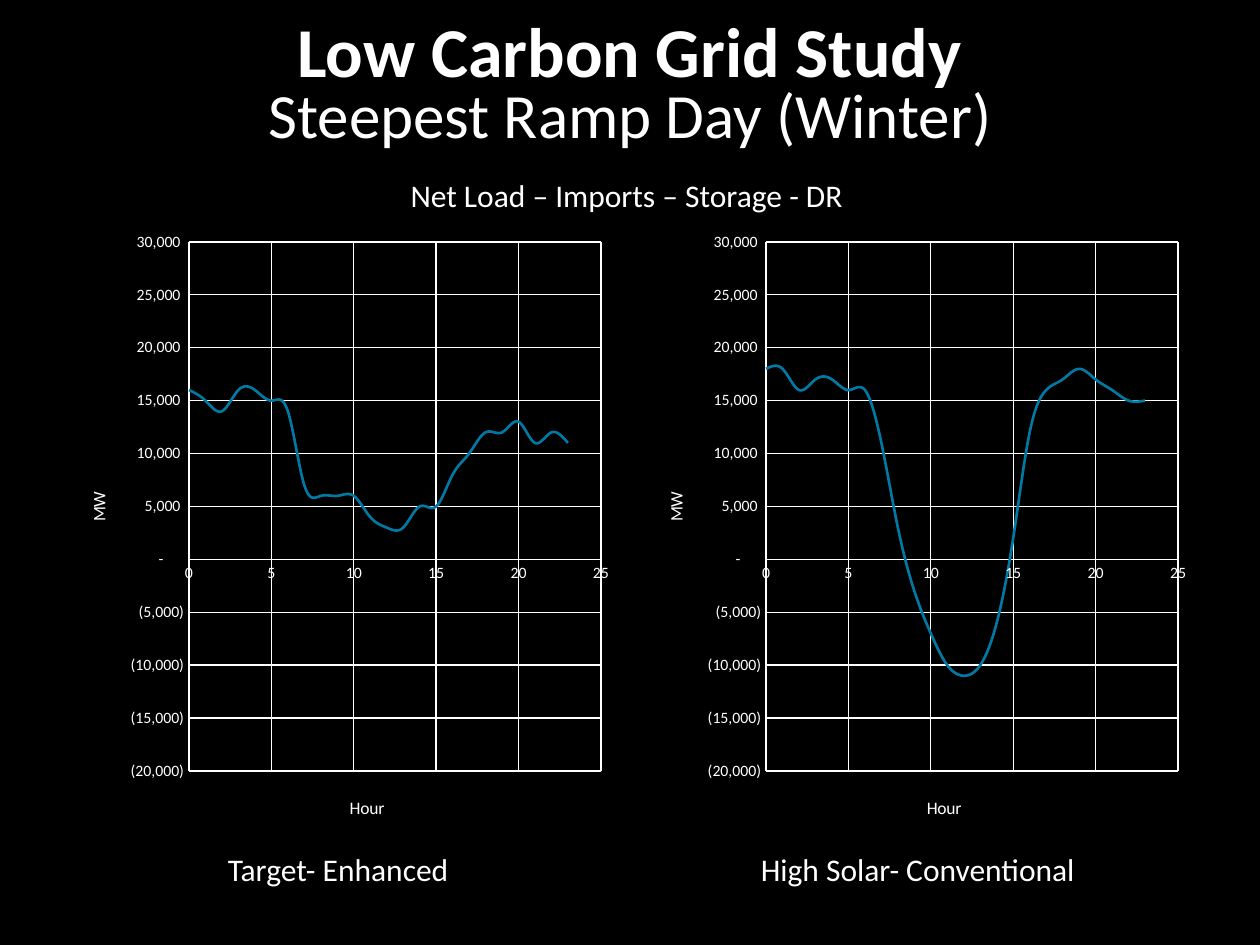
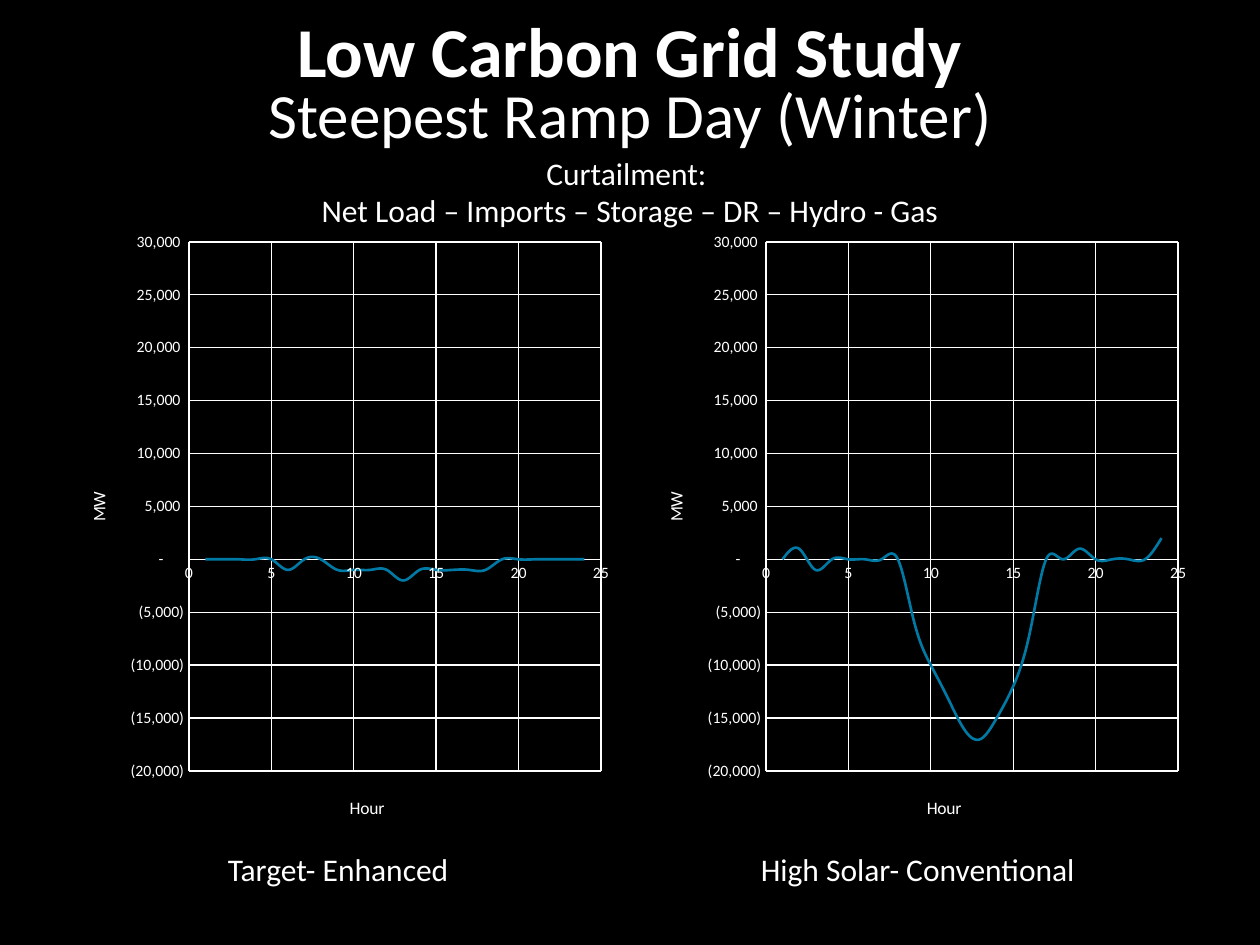
from pptx import Presentation
from pptx.chart.data import XyChartData
from pptx.dml.color import RGBColor
from pptx.enum.chart import XL_CHART_TYPE, XL_TICK_MARK
from pptx.enum.text import MSO_AUTO_SIZE, PP_ALIGN
from pptx.oxml import parse_xml
from pptx.oxml.ns import nsdecls
from pptx.util import Inches, Pt

BLACK = RGBColor(0x00, 0x00, 0x00)
WHITE = RGBColor(0xFF, 0xFF, 0xFF)
BLUE = RGBColor(0x00, 0x7A, 0xA5)
FONT = "Calibri"
MEGAWATTS = '_(* #,##0_);_(* (#,##0);_(* "-"??_);_(@_)'
CHART_WIDTH, CHART_HEIGHT = 4.42, 4.95

# Scenario name, its left edge and width, and the left edge of its chart
SCENARIOS = [
    ("Target- Enhanced", 1.71, 2.0, 0.5),
    ("High Solar- Conventional", 5.94, 2.71, 5.08),
]

# Subtitle with its box and alignment, first hour, and each scenario's hourly load in 1,000 MW
SLIDES = [
    (["Net Load – Imports – Storage - DR"], (3.16, 1.35, 3.69, 0.4), PP_ALIGN.LEFT, 0, [
        [16, 15, 14, 16, 16, 15, 14, 7, 6, 6, 6, 4,
         3, 3, 5, 5, 8, 10, 12, 12, 13, 11, 12, 11],
        [18, 18, 16, 17, 17, 16, 16, 11, 3, -3, -7, -10,
         -11, -10, -6, 2, 12, 16, 17, 18, 17, 16, 15, 15],
    ]),
    (["Curtailment: ", "Net Load – Imports – Storage – DR – Hydro - Gas"],
     (2.35, 1.17, 5.3, 0.71), PP_ALIGN.CENTER, 1, [
        [0, 0, 0, 0, 0, -1, 0, 0, -1, -1, -1, -1,
         -2, -1, -1, -1, -1, -1, 0, 0, 0, 0, 0, 0],
        [0, 1, -1, 0, 0, 0, 0, 0, -6, -10, -13, -16,
         -17, -15, -12, -7, 0, 0, 1, 0, 0, 0, 0, 2],
    ]),
]


def add_text(slide, lines, box, size=18, bold=False, align=PP_ALIGN.CENTER):
    shape = slide.shapes.add_textbox(*[Inches(length) for length in box])
    frame = shape.text_frame
    frame.word_wrap = True
    frame.auto_size = MSO_AUTO_SIZE.SHAPE_TO_FIT_TEXT
    frame.text = "\n".join(lines)
    for paragraph in frame.paragraphs:
        paragraph.alignment = align
        font = paragraph.runs[0].font
        font.name, font.size, font.bold = FONT, Pt(size), bold
        font.color.rgb = WHITE


def set_layout(element, left, top, size=None):
    """Place a chart part, in inches from the corner of the chart."""
    for layout in element.xpath("c:layout"):
        element.remove(layout)
    target = extent = ""
    if size:
        target = '<c:layoutTarget val="inner"/>'
        extent = (f'<c:w val="{size[0] / CHART_WIDTH}"/>'
                  f'<c:h val="{size[1] / CHART_HEIGHT}"/>')
    layout = parse_xml(
        f'<c:layout {nsdecls("c")}><c:manualLayout>{target}'
        '<c:xMode val="edge"/><c:yMode val="edge"/>'
        f'<c:x val="{left / CHART_WIDTH}"/><c:y val="{top / CHART_HEIGHT}"/>{extent}'
        '</c:manualLayout></c:layout>')
    element.insert(len(element.xpath("c:tx")), layout)


presentation = Presentation()
presentation.slide_width = Inches(10)
presentation.slide_height = Inches(7.5)

for subtitle, subtitle_box, subtitle_align, first_hour, loads in SLIDES:
    slide = presentation.slides.add_slide(presentation.slide_layouts[6])
    slide.background.fill.solid()
    slide.background.fill.fore_color.rgb = BLACK

    # Titles
    add_text(slide, subtitle, subtitle_box, align=subtitle_align)
    add_text(slide, ["Steepest Ramp Day (Winter)"], (1.09, 0.55, 7.82, 0.71), size=36)
    add_text(slide, ["Low Carbon Grid Study"], (1.68, 0.01, 6.63, 0.77), size=40, bold=True)

    # One captioned chart per scenario
    for (scenario, caption_left, caption_width, chart_left), load in zip(SCENARIOS, loads):
        add_text(slide, [scenario], (caption_left, 6.7, caption_width, 0.4),
                 align=PP_ALIGN.LEFT)

        chart_data = XyChartData()
        series_data = chart_data.add_series("Series 1")
        for hour, thousands in enumerate(load, first_hour):
            series_data.add_data_point(hour, thousands * 1000)
        chart = slide.shapes.add_chart(
            XL_CHART_TYPE.XY_SCATTER_SMOOTH_NO_MARKERS, Inches(chart_left), Inches(1.75),
            Inches(CHART_WIDTH), Inches(CHART_HEIGHT), chart_data).chart
        chart.has_title = False
        chart.has_legend = False
        chart.font.name, chart.font.size = FONT, Pt(10)
        chart.font.color.rgb = WHITE

        # Smooth load curve
        series = chart.plots[0].series[0]
        series.format.line.color.rgb = BLUE
        series.format.line.width = Pt(1.5)
        for smooth in series._element.xpath("c:smooth"):
            smooth.set("val", "1")

        # Axes
        for axis, title, low, high, step, number_format in [
            (chart.category_axis, "Hour", 0, 25, 5, "General"),
            (chart.value_axis, "MW", -20000, 30000, 5000, MEGAWATTS),
        ]:
            axis.minimum_scale, axis.maximum_scale = low, high
            axis.major_unit = step
            axis.major_tick_mark = axis.minor_tick_mark = XL_TICK_MARK.NONE
            axis.has_major_gridlines = True
            for axis_line in (axis.format.line, axis.major_gridlines.format.line):
                axis_line.color.rgb, axis_line.width = WHITE, Pt(0.75)
            labels = axis.tick_labels
            labels.number_format = number_format
            labels.number_format_is_linked = False
            labels.font.name, labels.font.size = FONT, Pt(9)
            labels.font.color.rgb = WHITE
            axis.axis_title.text_frame.text = title
            font = axis.axis_title.text_frame.paragraphs[0].runs[0].font
            font.name, font.size, font.bold = FONT, Pt(10), False
            font.color.rgb = WHITE

        # Turn the MW title and place the plot and both titles
        value_title = chart.value_axis.axis_title
        body = value_title.text_frame._txBody.bodyPr
        body.set("rot", "-5400000")
        body.set("vert", "horz")
        plot_area = chart._chartSpace.xpath("c:chart/c:plotArea")[0]
        set_layout(plot_area, 1, 0.17, size=(3.27, 4.2))
        set_layout(chart.category_axis.axis_title._element, 2.25, 4.55)
        set_layout(value_title._element, 0.17, 2.13)

presentation.save("out.pptx")
